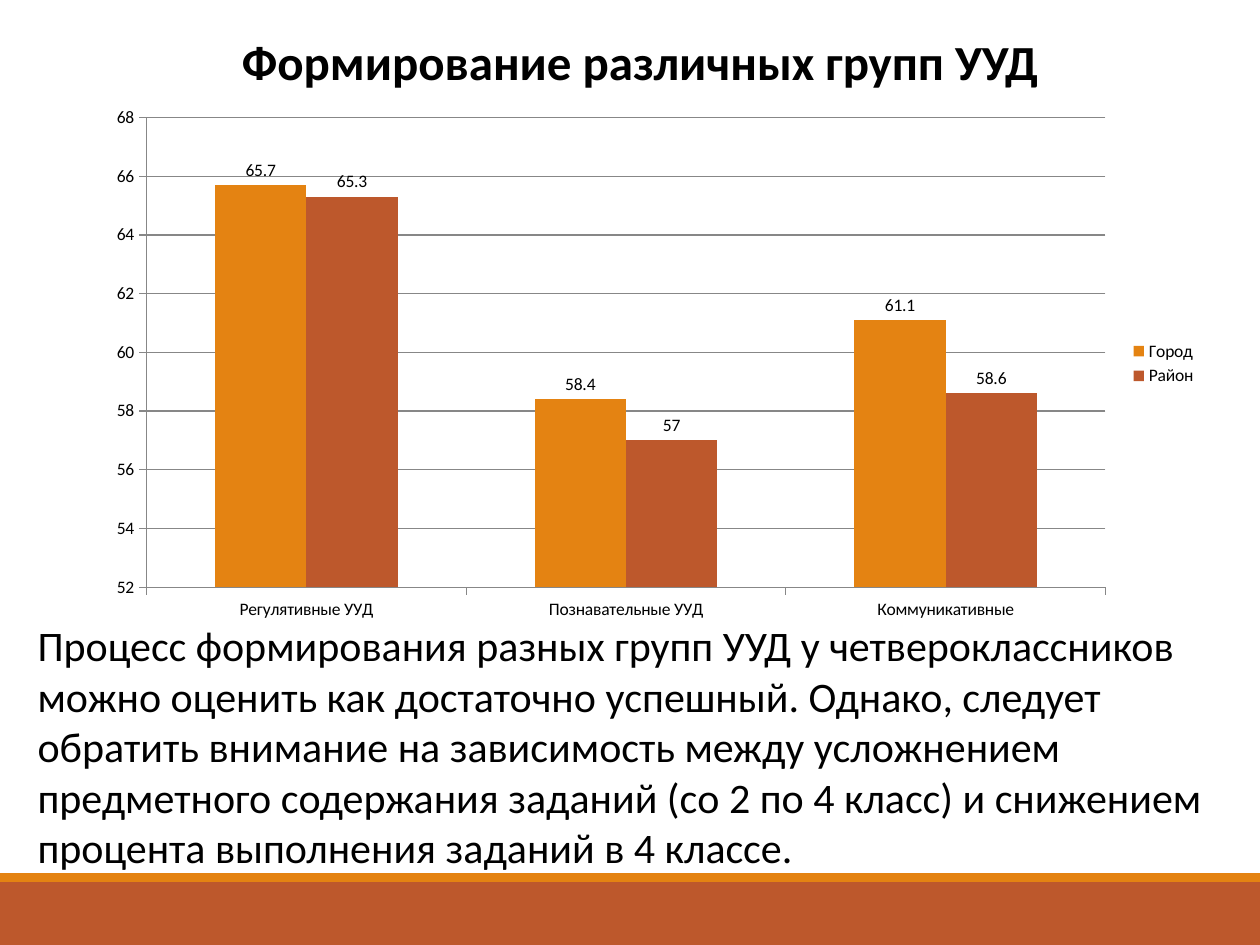
from dataclasses import dataclass
from typing import NamedTuple

from pptx import Presentation
from pptx.chart.data import CategoryChartData
from pptx.dml.color import RGBColor
from pptx.enum.chart import XL_CHART_TYPE as ChartType
from pptx.enum.chart import XL_LABEL_POSITION as LabelPosition
from pptx.enum.chart import XL_LEGEND_POSITION as LegendPosition
from pptx.enum.chart import XL_TICK_MARK as TickMark
from pptx.enum.shapes import MSO_SHAPE as Shape
from pptx.enum.text import MSO_ANCHOR as Anchor
from pptx.enum.text import MSO_AUTO_SIZE as AutoSize
from pptx.enum.text import PP_ALIGN as Align
from pptx.util import Pt

EMU_PER_PX = 9144


@dataclass(frozen=True)
class Theme:
    font: str = "Calibri"
    text: str = "000000"
    orange: str = "E48312"
    rust: str = "BD582C"
    grid: str = "878787"
    title_size: int = 28
    body_size: int = 24
    chart_size: int = 10


class Box(NamedTuple):
    left: int
    top: int
    width: int
    height: int

    def emu(self):
        return [px(value) for value in self]


THEME = Theme()
PAGE = Box(0, 0, 1000, 750)
TITLE = "Формирование различных групп УУД"
CONCLUSION = (
    "Процесс формирования разных групп УУД у четвероклассников можно оценить "
    "как достаточно успешный. Однако, следует обратить внимание на зависимость "
    "между усложнением предметного содержания заданий (со 2 по 4 класс) и "
    "снижением процента выполнения заданий в 4 классе."
)
CATEGORIES = ["Регулятивные УУД", "Познавательные УУД", "Коммуникативные"]
SERIES = [
    ("Город", (65.7, 58.4, 61.1), THEME.orange),
    ("Район", (65.3, 57, 58.6), THEME.rust),
]


def px(value):
    return value * EMU_PER_PX


def color(code):
    return RGBColor.from_string(code)


def format_font(font, size, bold=False):
    font.name = THEME.font
    font.size = Pt(size)
    font.bold = bold
    font.color.rgb = color(THEME.text)


def write(frame, text, *, size, bold=False, anchor=Anchor.TOP):
    frame.word_wrap = True
    frame.auto_size = AutoSize.NONE
    frame.vertical_anchor = anchor
    para = frame.paragraphs[0]
    para.alignment = Align.LEFT
    span = para.add_run()
    span.text = text
    format_font(span.font, size, bold)


def add_title(page, box):
    title = page.shapes.title
    title.left, title.top, title.width, title.height = box.emu()
    write(title.text_frame, TITLE, size=THEME.title_size, bold=True,
          anchor=Anchor.MIDDLE)


def add_footer(page, box):
    stripe = 7
    bands = [
        (Box(box.left, box.top + stripe, box.width, box.height - stripe), THEME.rust),
        (Box(box.left, box.top, box.width, stripe), THEME.orange),
    ]
    for band, fill in bands:
        shape = page.shapes.add_shape(Shape.RECTANGLE, *band.emu())
        shape.shadow.inherit = False
        shape.fill.solid()
        shape.fill.fore_color.rgb = color(fill)
        shape.line.fill.background()


def style_axes(chart):
    values = chart.value_axis
    values.minimum_scale, values.maximum_scale, values.major_unit = 52, 68, 2
    values.has_major_gridlines = True
    for axis in (chart.category_axis, values):
        axis.major_tick_mark = TickMark.OUTSIDE
        axis.minor_tick_mark = TickMark.NONE
        axis.tick_labels.number_format = "General"
        axis.tick_labels.number_format_is_linked = False
    for part in (chart.category_axis, values, values.major_gridlines):
        part.format.line.color.rgb = color(THEME.grid)
        part.format.line.width = Pt(0.75)


def add_results_chart(page, box):
    data = CategoryChartData()
    data.categories = CATEGORIES
    for name, values, _ in SERIES:
        data.add_series(name, values)
    chart = page.shapes.add_chart(ChartType.COLUMN_CLUSTERED, *box.emu(), data).chart
    format_font(chart.font, THEME.chart_size)
    chart.has_title = False
    chart.has_legend = True
    chart.legend.position = LegendPosition.RIGHT
    chart.legend.include_in_layout = False
    style_axes(chart)
    plot = chart.plots[0]
    plot.gap_width = 150
    plot.overlap = 0
    plot.vary_by_categories = False
    for series, (_, _, fill) in zip(plot.series, SERIES):
        series.invert_if_negative = False
        series.format.fill.solid()
        series.format.fill.fore_color.rgb = color(fill)
        labels = series.data_labels
        labels.show_value = True
        labels.position = LabelPosition.OUTSIDE_END
        format_font(labels.font, THEME.chart_size)


def add_conclusion(page, box):
    frame = page.shapes.add_textbox(*box.emu()).text_frame
    write(frame, CONCLUSION, size=THEME.body_size)


def main():
    deck = Presentation()
    deck.slide_width, deck.slide_height = px(PAGE.width), px(PAGE.height)
    page = deck.slides.add_slide(deck.slide_layouts[5])
    page.background.fill.solid()
    page.background.fill.fore_color.rgb = color("FFFFFF")
    add_footer(page, Box(0, 693, PAGE.width, 57))
    add_title(page, Box(182, 20, 672, 57))
    add_results_chart(page, Box(75, 77, 885, 423))
    add_conclusion(page, Box(20, 487, 953, 212))
    deck.save("out.pptx")


if __name__ == "__main__":
    main()
